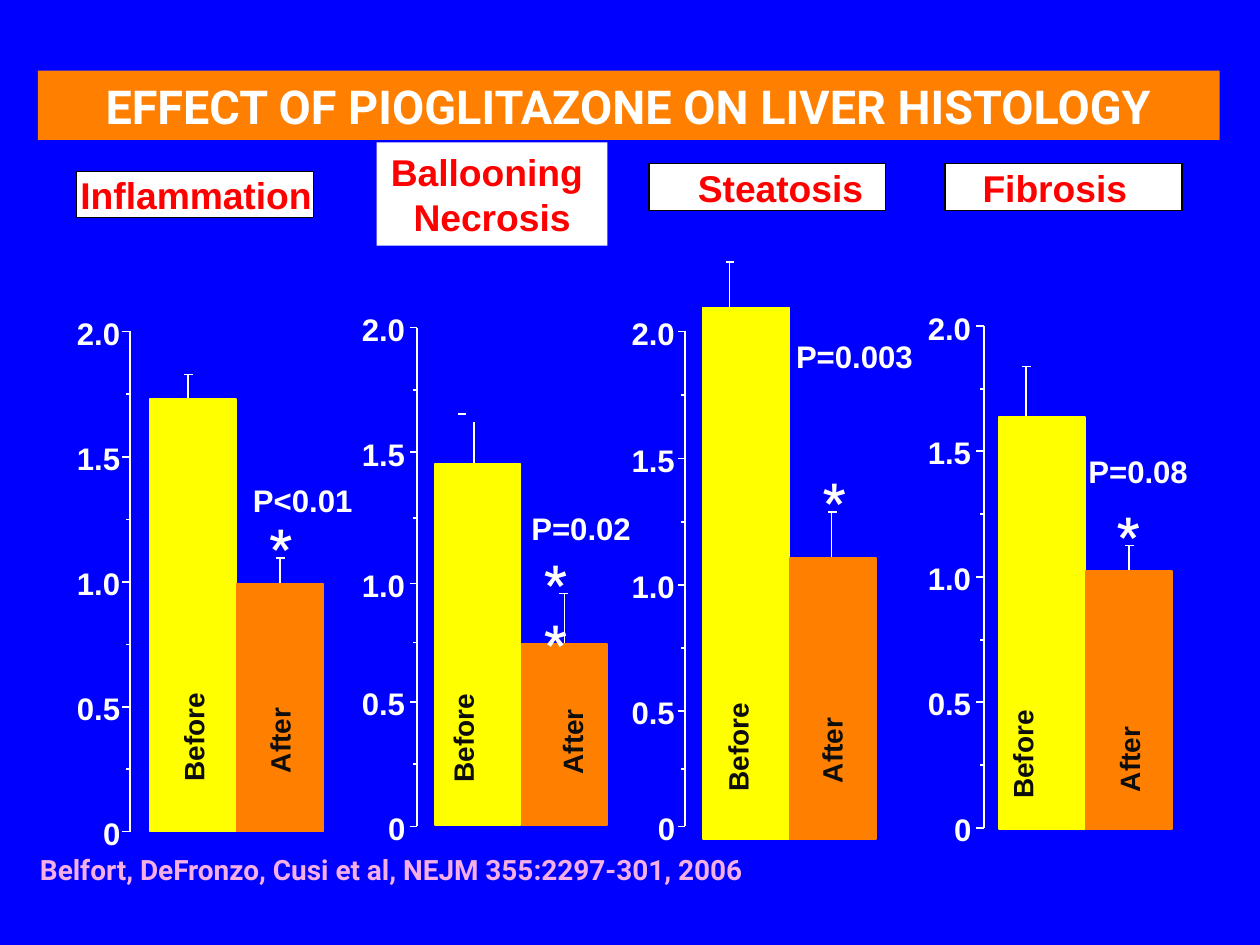
"""Build a slide of four bar panels on liver histology before and after pioglitazone."""
from lxml import etree
from pptx import Presentation
from pptx.dml.color import RGBColor
from pptx.enum.shapes import MSO_CONNECTOR, MSO_SHAPE
from pptx.enum.text import MSO_ANCHOR, MSO_AUTO_SIZE, PP_ALIGN
from pptx.oxml.ns import qn
from pptx.util import Pt

RECT = MSO_SHAPE.RECTANGLE
STRAIGHT = MSO_CONNECTOR.STRAIGHT
LEFT, CENTER = PP_ALIGN.LEFT, PP_ALIGN.CENTER
MIDDLE = MSO_ANCHOR.MIDDLE
NO_AUTOSIZE = MSO_AUTO_SIZE.NONE

BLUE = RGBColor(0x00, 0x00, 0xFF)
ORANGE = RGBColor(0xFF, 0x7F, 0x00)
YELLOW = RGBColor(0xFF, 0xFF, 0x00)
WHITE = RGBColor(0xFF, 0xFF, 0xFF)
BLACK = RGBColor(0x00, 0x00, 0x00)
INK = RGBColor(0x0D, 0x0D, 0x0D)
RED = RGBColor(0xFF, 0x00, 0x00)
PINK = RGBColor(0xF4, 0xAE, 0xE8)

TICK_LABELS = ["2.0", "1.5", "1.0", "0.5", "0"]
BAR_NAMES = [("Before", YELLOW, 51), ("After", ORANGE, 37.5)]
BAR_W, BAR_STEP = 49, 49.6

# axis: x; label_right: right edge of tick labels; ticks: y of 2.0 down to 0
# bars: top, whisker x and top, cap x and y, label left and top
PANELS = [
    dict(axis=74.4, label_right=69, ticks=[189.4, 261, 332.6, 404, 475.2],
         left=85.8, base=475.2,
         bars=[(228.2, 107.4, 213.8, 107.6, 214, 85, 411.2),
               (333.4, 160, 319, 160.2, 319, 141.1, 413.3)],
         star=("*", 154, 294.5, 11.5), p=("P<0.01", 137.5, 271.4, 72)),
    dict(axis=238.4, label_right=231.8, ticks=[187.2, 258.5, 333.4, 401, 472.3],
         left=248.4, base=471.6,
         bars=[(265, 271, 241.2, 264, 236.5, 239, 411.8),
               (367.9, 322.5, 339.1, 322.2, 339.1, 308.2, 414)],
         star=("**", 311, 315.4, 22.3), p=("P=0.02", 296.6, 287.3, 72)),
    dict(axis=391.6, label_right=385.9, ticks=[189.4, 262, 334.3, 406.3, 472.3],
         left=401.8, base=479.5,
         bars=[(175.7, 416.9, 149.8, 417.2, 149.8, 396, 416.9),
               (319, 475.2, 292.5, 475.6, 292.6, 456.5, 419)],
         star=("*", 470.2, 268.6, 11.5), p=("P=0.003", 447.8, 189.4, 82)),
    dict(axis=562.3, label_right=555.2, ticks=[186.5, 257.8, 329.8, 401.3, 473],
         left=571, base=473.8,
         bars=[(238.3, 586.1, 209.5, 586.4, 209.5, 558.7, 421.2),
               (326.2, 645.1, 311.8, 645.5, 311.8, 626.4, 424.1)],
         star=("*", 638.3, 288, 11.5), p=("P=0.08", 614.9, 254.9, 72)),
]


def add_text(text, x, y, w, h, size, color=WHITE, font="Arial", inset=False, wrap=False):
    box = s.shapes.add_textbox(Pt(x), Pt(y), Pt(w), Pt(h))
    tf = box.text_frame
    tf.word_wrap = wrap
    if not inset:
        tf.margin_left = tf.margin_right = tf.margin_top = tf.margin_bottom = 0
    p = tf.paragraphs[0]
    p.text = text
    p.alignment = LEFT
    p.font.name, p.font.size, p.font.bold = font, Pt(size), True
    p.font.color.rgb = color
    return box


def add_line(x1, y1, x2, y2):
    ln = s.shapes.add_connector(STRAIGHT, Pt(x1), Pt(y1), Pt(x2), Pt(y2))
    ln.line.color.rgb = WHITE
    ln.line.width = Pt(1)
    etree.SubElement(ln._element.spPr, qn("a:effectLst"))


prs = Presentation()
prs.slide_width, prs.slide_height = Pt(720), Pt(540)
s = prs.slides.add_slide(prs.slide_layouts[5])
s.background.fill.solid()
s.background.fill.fore_color.rgb = BLUE

title = s.shapes.title
title.left, title.top, title.width, title.height = Pt(21.6), Pt(40.4), Pt(675.4), Pt(39.6)
title.fill.solid()
title.fill.fore_color.rgb = ORANGE
tf = title.text_frame
tf.text = "EFFECT OF PIOGLITAZONE ON LIVER HISTOLOGY"
tf.auto_size = NO_AUTOSIZE
tf.vertical_anchor = MIDDLE
p = tf.paragraphs[0]
p.alignment = CENTER
p.font.name, p.font.size, p.font.bold = "Roboto", Pt(26.7), True
p.font.color.rgb = WHITE

box = s.shapes.add_shape(RECT, Pt(215.3), Pt(81.4), Pt(131.8), Pt(59))
box.shadow.inherit = False
box.fill.solid()
box.fill.fore_color.rgb = WHITE
box.line.fill.background()
tf = box.text_frame
tf.word_wrap = False
tf.text = "Ballooning \nNecrosis"
for p in tf.paragraphs:
    p.alignment = CENTER
    p.font.name, p.font.size, p.font.bold = "Arial", Pt(21.3), True
    p.font.color.rgb = RED

for text, frame_x, frame_y, text_x, text_w in [
    ("Inflammation", 43.9, 97.9, 38.9, 148.3),
    ("Steatosis", 370.8, 93.6, 391.7, 113.8),
    ("Fibrosis", 540, 93.6, 554.4, 97.9),
]:
    frame = s.shapes.add_shape(RECT, Pt(frame_x), Pt(frame_y), Pt(135.4), Pt(26.6))
    frame.shadow.inherit = False
    frame.fill.solid()
    frame.fill.fore_color.rgb = WHITE
    frame.line.color.rgb = BLACK
    frame.line.width = Pt(0.75)
    add_text(text, text_x, frame_y - 2.9, text_w, 33.1, 21.3, RED, inset=True)

for panel in PANELS:
    axis, ticks = panel["axis"], panel["ticks"]
    add_line(axis, ticks[-1], axis, ticks[0])
    for y, label in zip(ticks, TICK_LABELS):
        add_line(axis - 4.4, y, axis, y)
        w = 10 if label == "0" else 25
        add_text(label, panel["label_right"] - w, y - 10, w, 21.6, 17.8)
    for upper, lower in zip(ticks, ticks[1:]):
        middle = (upper + lower) / 2
        add_line(axis - 2.2, middle, axis, middle)

    for i, (top, x, whisker_top, cap_x, cap_y, label_x, label_y) in enumerate(panel["bars"]):
        name, color, label_w = BAR_NAMES[i]
        add_line(x, whisker_top, x, top)
        add_line(cap_x - 2.5, cap_y, cap_x + 2.5, cap_y)
        bar = s.shapes.add_shape(RECT, Pt(panel["left"] + i * BAR_STEP), Pt(top),
                                 Pt(BAR_W), Pt(panel["base"] - top))
        bar.shadow.inherit = False
        bar.fill.solid()
        bar.fill.fore_color.rgb = color
        bar.line.color.rgb = color
        bar.line.width = Pt(1)
        add_text(name, label_x, label_y, label_w, 19.4, 16, INK).rotation = 270

    stars, x, y, w = panel["star"]
    add_text(stars, x, y, w, 34.6, 28.4, font="Roboto", wrap=len(stars) > 1)
    text, x, y, w = panel["p"]
    add_text(text, x, y, w, 28.8, 17.8, inset=True)

add_text("Belfort, DeFronzo, Cusi et al, NEJM 355:2297-301, 2006",
         15.8, 483.8, 434.9, 26.6, 16, PINK, "Roboto", inset=True)

prs.save("out.pptx")
